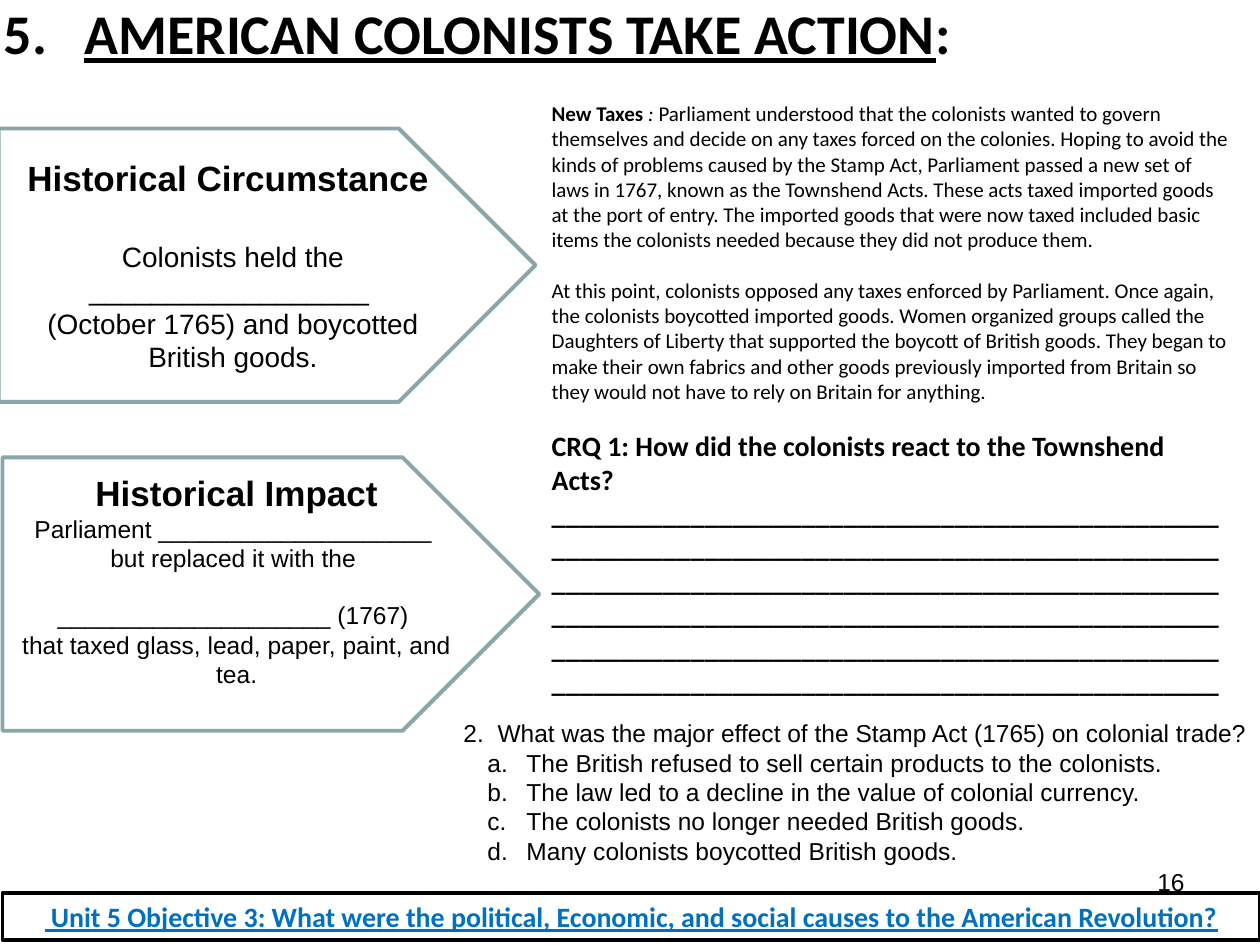
from lxml import etree
from pptx import Presentation
from pptx.dml.color import RGBColor
from pptx.enum.shapes import MSO_SHAPE
from pptx.enum.text import MSO_ANCHOR, MSO_AUTO_SIZE, PP_ALIGN
from pptx.oxml.ns import qn
from pptx.util import Pt

PX = 9144  # 100 px to the inch
BLACK = RGBColor(0x00, 0x00, 0x00)
WHITE = RGBColor(0xFF, 0xFF, 0xFF)
SAGE = RGBColor(0x8A, 0xA6, 0xA8)
BLUE = RGBColor(0x00, 0x70, 0xC0)
LEFT, CENTER, RIGHT = PP_ALIGN.LEFT, PP_ALIGN.CENTER, PP_ALIGN.RIGHT
TOP, MIDDLE = MSO_ANCHOR.TOP, MSO_ANCHOR.MIDDLE


def box(x, y, w, h, shape=None):
    """Add a text box, or an outlined preset shape, and return it."""
    area = [v * PX for v in (x, y, w, h)]
    if shape is None:
        sp = s.shapes.add_textbox(*area)
    else:
        sp = s.shapes.add_shape(shape, *area)
        sp.shadow.inherit = False
        sp.line.width = Pt(2.25)
    sp.text_frame.word_wrap = True
    sp.text_frame.vertical_anchor = TOP
    return sp


def write(p, text, size, font, bold=False, align=LEFT, color=BLACK, before=0):
    """Fill a paragraph and format its runs."""
    p.text = text
    p.alignment = align
    p.space_before = Pt(before)
    for r in p.runs:
        r.font.size, r.font.name, r.font.bold = Pt(size), font, bold
        r.font.color.rgb = color


prs = Presentation()
prs.slide_width, prs.slide_height = 1000 * PX, 750 * PX
s = prs.slides.add_slide(prs.slide_layouts[5])

# Title
title = s.shapes.title
title.left, title.top, title.width, title.height = [v * PX for v in (-7, -6, 865, 64)]
tf = title.text_frame
tf.auto_size = MSO_AUTO_SIZE.NONE
tf.vertical_anchor = TOP
p = tf.paragraphs[0]
write(p, "5.\t", 32, "Calibri", True)
for text, underline in (("AMERICAN COLONISTS TAKE ACTION", True), (":", False)):
    r = p.add_run()
    r.text = text
    r.font.size, r.font.name, r.font.bold = Pt(32), "Calibri", True
    r.font.underline = underline
    r.font.color.rgb = BLACK
pPr = p._p.get_or_add_pPr()
pPr.set("marL", str(64 * PX))
pPr.set("indent", str(-64 * PX))

# Page number
page = box(717, 683, 233, 52)
write(page.text_frame.paragraphs[0], "16", 14, "Arial", align=RIGHT)

# Reading passage and written question
tf = box(428, 75, 558, 488).text_frame
p = tf.paragraphs[0]
write(p, "New Taxes ", 12, "Calibri", True)
for text, italic in (
    (": ", True),
    ("Parliament understood that the colonists wanted to govern themselves and decide "
     "on any taxes forced on the colonies. Hoping to avoid the kinds of problems caused "
     "by the Stamp Act, Parliament passed a new set of laws in 1767, known as the "
     "Townshend Acts. These acts taxed imported goods at the port of entry. The imported "
     "goods that were now taxed included basic items the colonists needed because they "
     "did not produce them.", False),
):
    r = p.add_run()
    r.text = text
    r.font.size, r.font.name, r.font.italic = Pt(12), "Calibri", italic
    r.font.color.rgb = BLACK
write(tf.add_paragraph(),
      "At this point, colonists opposed any taxes enforced by Parliament. Once again, the "
      "colonists boycotted imported goods. Women organized groups called the Daughters of "
      "Liberty that supported the boycott of British goods. They began to make their own "
      "fabrics and other goods previously imported from Britain so they would not have to "
      "rely on Britain for anything.", 12, "Calibri", before=14.6)
answer_lines = "_" * 48 * 6
write(tf.add_paragraph(),
      "CRQ 1: How did the colonists react to the Townshend Acts? " + answer_lines,
      16, "Calibri", True, before=14.6)

# Arrow panels: x, y, bottom inset, heading, body size, (text, space before)
PANELS = [
    (-1, 102, 5, "Historical Circumstance ", 16, [
        ("Colonists held the " + "_" * 18 + " ", 23),
        ("(October 1765) and boycotted British goods.", 0)]),
    (2, 363, 27, "Historical Impact", 14, [
        ("Parliament " + "_" * 20 + " ", 0),
        ("but replaced it with the ", 0),
        ("_" * 20 + " (1767) ", 16),
        ("that taxed glass, lead, paper, paint, and tea.", 0)]),
]
for x, y, inset, heading, size, body in PANELS:
    sp = box(x, y, 426, 217, MSO_SHAPE.PENTAGON)
    sp.fill.solid()
    sp.fill.fore_color.rgb = WHITE
    sp.line.color.rgb = SAGE
    tf = sp.text_frame
    tf.vertical_anchor = MIDDLE
    tf.margin_bottom = inset * PX
    write(tf.paragraphs[0], heading, 20, "Arial", True, CENTER)
    for text, before in body:
        write(tf.add_paragraph(), text, size, "Arial", align=CENTER, before=before)

# Objective bar
bar = box(2, 709, 998, 37, MSO_SHAPE.RECTANGLE)
bar.fill.background()
bar.line.color.rgb = BLACK
p = bar.text_frame.paragraphs[0]
write(p, " Unit 5 Objective 3: What were the political, Economic, and social causes to the "
      "American Revolution?", 16, "Calibri", True, CENTER, BLUE)
p.runs[0].font.underline = True

# Multiple-choice question
tf = box(358, 565, 658, 128).text_frame
p = tf.paragraphs[0]
write(p, "2.\tWhat was the major effect of the Stamp Act (1765) on colonial trade?", 14, "Arial")
pPr = p._p.get_or_add_pPr()
pPr.set("marL", str(27 * PX))
pPr.set("indent", str(-27 * PX))
for choice in (
    "The British refused to sell certain products to the colonists.",
    "The law led to a decline in the value of colonial currency.",
    "The colonists no longer needed British goods.",
    "Many colonists boycotted British goods.",
):
    p = tf.add_paragraph()
    write(p, choice, 14, "Arial")
    p.level = 1
    pPr = p._p.get_or_add_pPr()
    pPr.set("marL", str(50 * PX))
    pPr.set("indent", str(-31 * PX))
    etree.SubElement(pPr, qn("a:buFont")).set("typeface", "Arial")
    etree.SubElement(pPr, qn("a:buAutoNum")).set("type", "alphaLcPeriod")

prs.save("out.pptx")
